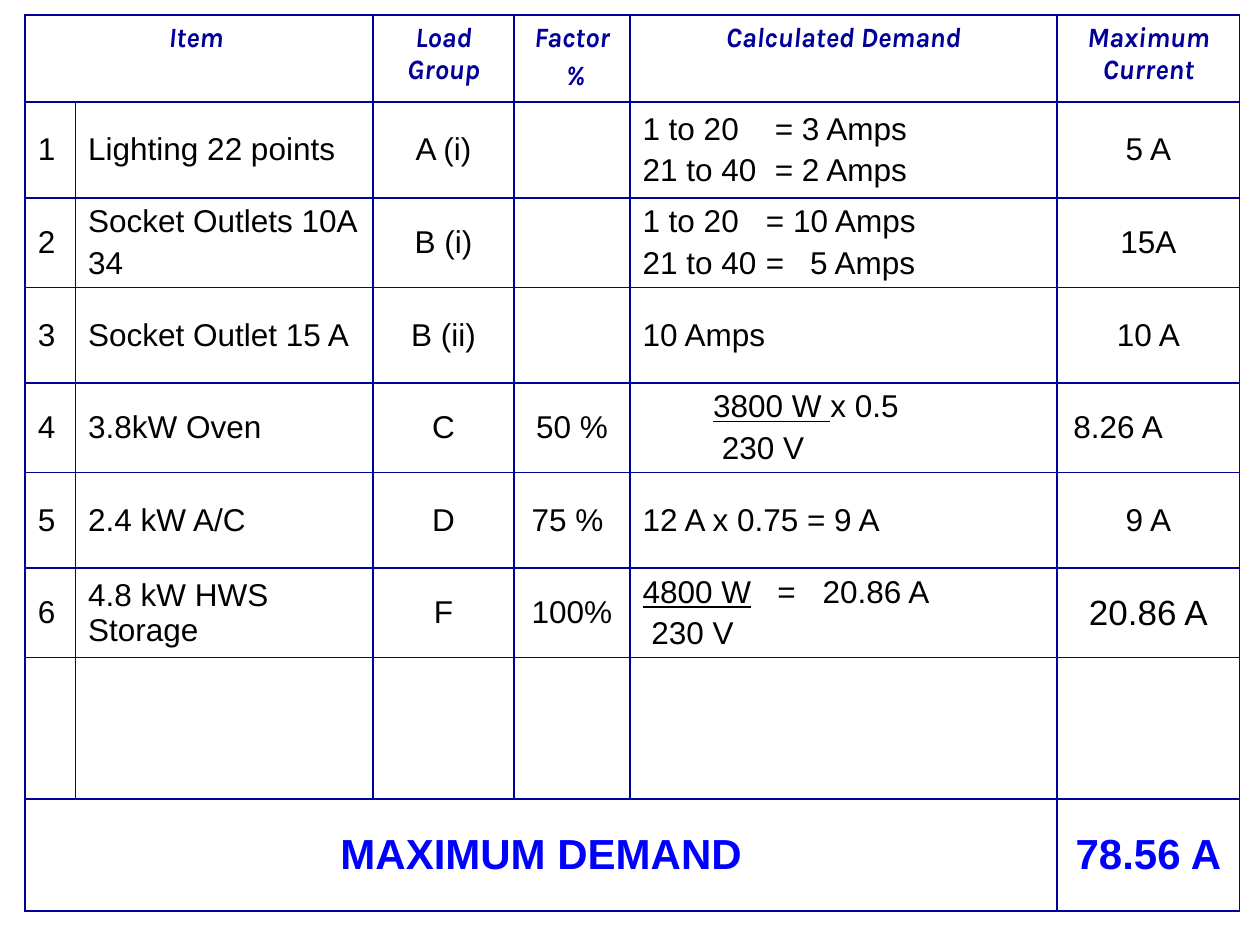
from dataclasses import dataclass

from lxml import etree
from pptx import Presentation
from pptx.dml.color import RGBColor
from pptx.enum.text import MSO_ANCHOR, PP_ALIGN
from pptx.oxml.ns import qn
from pptx.util import Inches, Pt

LEFT, CENTER = PP_ALIGN.LEFT, PP_ALIGN.CENTER
TOP, MIDDLE = MSO_ANCHOR.TOP, MSO_ANCHOR.MIDDLE

COLORS = {"paper": "FFFFFF", "border": "010199", "heading": "000099",
          "text": "000000", "total": "0000FF"}

COLUMN_WIDTHS = [0.4, 2.36, 1.12, 0.92, 3.39, 1.45]
ROW_HEIGHTS = [0.69, 0.76, 0.69, 0.76, 0.69, 0.76, 0.69, 1.12, 0.89]
COLUMN_ALIGNS = [LEFT, LEFT, CENTER, CENTER, LEFT, CENTER]


@dataclass
class Style:
    size: int = 18
    color: str = "text"
    font: str = "Arial"
    bold: bool = False
    italic: bool = False


@dataclass
class Line:
    """A paragraph with an underlined start, indents or tab stops (inches)."""
    text: str
    underlined: str = ""
    left: float = 0
    right: float = 0
    tabs: tuple = ()


BODY = Style()
LARGE = Style(size=20)
HEADING = Style(16, "heading", "Karla", True, True)
TOTAL = Style(24, "total", bold=True)

HEADINGS = [["Item "], [], ["Load Group"], ["Factor", " %"],
            ["Calculated Demand"], ["Maximum Current"]]

LOADS = [
    [["Lighting 22 points"], ["A (i)"], [],
     [Line("1 to 20\t= 3 Amps", tabs=(1.05,)),
      Line("21 to 40\t= 2 Amps", tabs=(1.05,))], ["5 A"]],
    [["Socket Outlets 10A", "34"], ["B (i)"], [],
     [Line("1 to 20\t= 10 Amps", tabs=(0.98,)),
      Line("21 to 40\t=\t5 Amps", tabs=(0.98, 1.33))], ["15A"]],
    [["Socket Outlet 15 A"], ["B (ii)"], [], ["10 Amps"], ["10 A"]],
    [["3.8kW Oven"], ["C"], ["50 %"],
     [Line("x 0.5", underlined="3800 W ", left=0.56),
      Line("230 V", left=0.63)],
     [Line("8.26 A", right=0.48)]],
    [["2.4 kW A/C"], ["D"], ["75 % "], ["12 A x 0.75 = 9 A"], ["9 A"]],
    [["4.8 kW HWS Storage"], ["F"], ["100%"],
     [Line("\t=\t20.86 A", underlined="4800 W", tabs=(1.07, 1.43)),
      Line("230 V", left=0.07)], ["20.86 A"]],
]


def add_run(paragraph, text, style, underline=False):
    run = paragraph.add_run()
    run.text = text
    font = run.font
    font.name, font.size = style.font, Pt(style.size)
    font.bold, font.italic = style.bold, style.italic
    font.underline = underline
    font.color.rgb = RGBColor.from_string(COLORS[style.color])


def space_paragraph(paragraph, line):
    """Set the 20 % space before, the indents and the tab stops."""
    props = paragraph._p.get_or_add_pPr()
    for name, inches in (("marL", line.left), ("marR", line.right)):
        if inches:
            props.set(name, str(Inches(inches)))
    before = etree.SubElement(props, qn("a:spcBef"))
    etree.SubElement(before, qn("a:spcPct"), val="20000")
    if line.tabs:
        stops = etree.SubElement(props, qn("a:tabLst"))
        for stop in line.tabs:
            etree.SubElement(stops, qn("a:tab"), pos=str(Inches(stop)), algn="l")


def fill_cell(cell, lines, align, style=BODY, anchor=MIDDLE):
    cell.vertical_anchor = anchor
    for index, line in enumerate(lines):
        if isinstance(line, str):
            line = Line(line)
        frame = cell.text_frame
        paragraph = frame.add_paragraph() if index else frame.paragraphs[0]
        paragraph.alignment = align
        space_paragraph(paragraph, line)
        if line.underlined:
            add_run(paragraph, line.underlined, style, underline=True)
        add_run(paragraph, line.text, style)


def frame_cell(cell):
    """Give a cell its four borders and a plain fill."""
    props = cell._tc.get_or_add_tcPr()
    for side in ("a:lnL", "a:lnR", "a:lnT", "a:lnB"):
        border = etree.SubElement(props, qn(side), w=str(Pt(1)))
        solid = etree.SubElement(border, qn("a:solidFill"))
        etree.SubElement(solid, qn("a:srgbClr"), val=COLORS["border"])
    cell.fill.solid()
    cell.fill.fore_color.rgb = RGBColor.from_string(COLORS["paper"])


def add_demand_table(slide):
    table = slide.shapes.add_table(
        len(ROW_HEIGHTS), len(COLUMN_WIDTHS), Inches(0.2), Inches(0.12),
        Inches(sum(COLUMN_WIDTHS)), Inches(sum(ROW_HEIGHTS))).table
    table.first_row = table.horz_banding = False
    for column, width in zip(table.columns, COLUMN_WIDTHS):
        column.width = Inches(width)
    for row, height in zip(table.rows, ROW_HEIGHTS):
        row.height = Inches(height)
    for cell in table.iter_cells():
        frame_cell(cell)
    return table


def main():
    prs = Presentation()
    prs.slide_width, prs.slide_height = Inches(10), Inches(7.5)
    slide = prs.slides.add_slide(prs.slide_layouts[6])
    table = add_demand_table(slide)

    table.cell(0, 0).merge(table.cell(0, 1))
    for col, heading in enumerate(HEADINGS):
        fill_cell(table.cell(0, col), heading, CENTER, HEADING, TOP)

    for number, load in enumerate(LOADS, start=1):
        for col, lines in enumerate([[str(number)]] + load):
            style = LARGE if lines == ["20.86 A"] else BODY
            fill_cell(table.cell(number, col), lines, COLUMN_ALIGNS[col], style)

    total_row, current_col = len(ROW_HEIGHTS) - 1, len(COLUMN_WIDTHS) - 1
    table.cell(total_row, 0).merge(table.cell(total_row, current_col - 1))
    fill_cell(table.cell(total_row, 0), ["MAXIMUM DEMAND"], CENTER, TOTAL)
    fill_cell(table.cell(total_row, current_col), ["78.56 A"], CENTER, TOTAL)

    prs.save("out.pptx")


if __name__ == "__main__":
    main()
